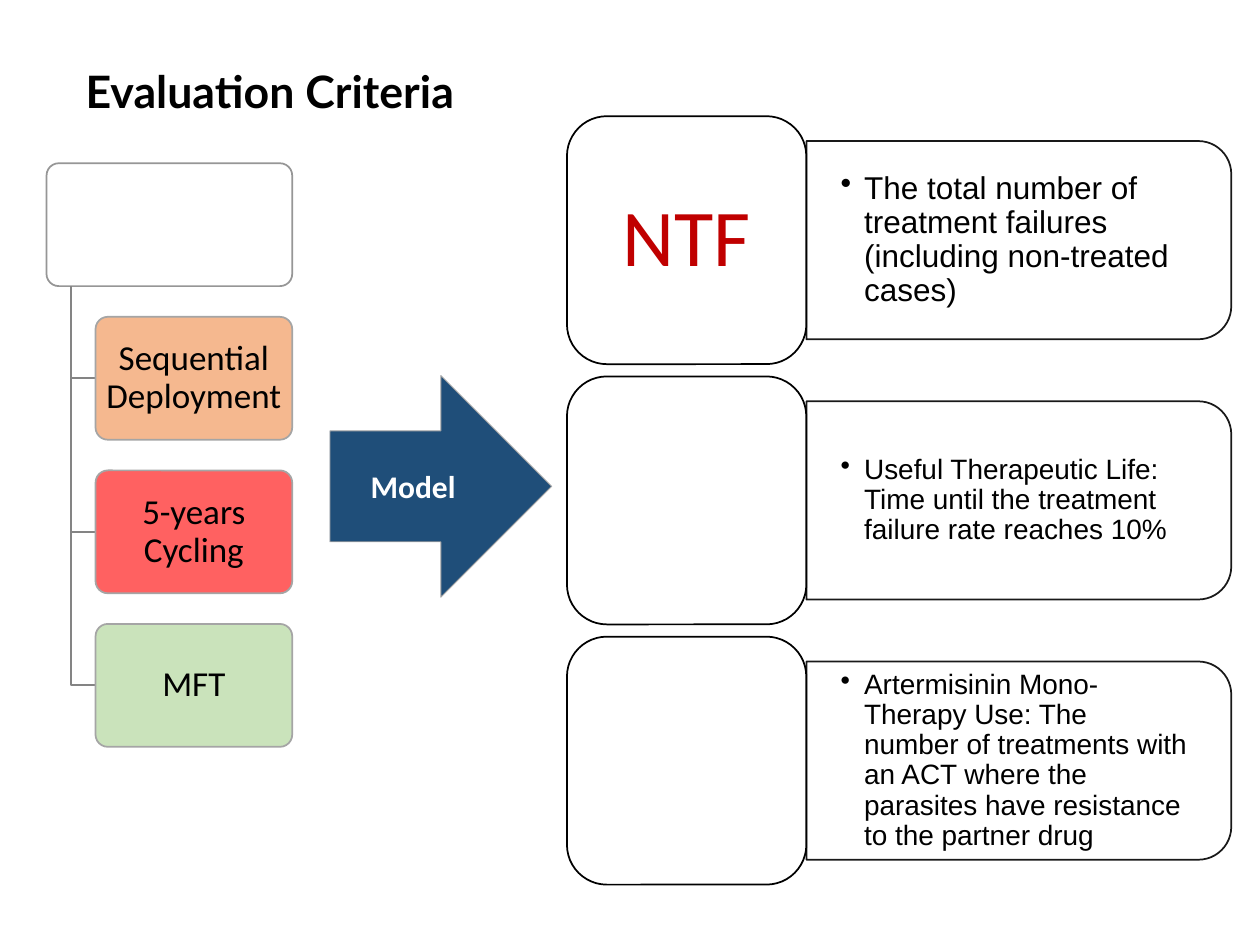
"""Build the Evaluation Criteria slide: strategies, model arrow and outcome measures."""
from lxml import etree
from pptx import Presentation, util as u
from pptx.dml import color
from pptx.enum import shapes, text
from pptx.oxml import ns

COLOURS = {
    "white": "FFFFFF", "black": "000000", "red": "C00000", "navy": "1F4E79",
    "orange": "F4B183", "coral": "FF5050", "green": "C5E0B4",
    "border": "A5A5A5", "root": "969696", "branch": "848484",
}
TITLE = "Evaluation Criteria"
STRATEGIES = [
    ("Sequential Deployment", "orange"),
    ("5-years Cycling", "coral"),
    ("MFT", "green"),
]
CRITERIA = [
    ("NTF", "The total number of treatment failures (including non-treated cases)", 18),
    ("", "Useful Therapeutic Life: Time until the treatment failure rate reaches 10%", 16),
    ("", "Artermisinin Mono-Therapy Use: The number of treatments with an ACT where "
         "the parasites have resistance to the partner drug", 16),
]

ROOT_LEFT, ROOT_TOP, ROOT_WIDTH, NODE_HEIGHT, NODE_PITCH = 26.6, 93.3, 140.4, 70.2, 87.75
CHILD_INDENT = 28
BOX_LEFT, BOX_TOP, BOX_WIDTH, BOX_HEIGHT, BOX_PITCH = 324, 66.4, 136.8, 141.7, 148.7
PANEL_WIDTH, PANEL_HEIGHT, TEXT_WIDTH, TEXT_HEIGHT = 242.8, 113.3, 237, 102.2


def rgb(name):
    return color.RGBColor.from_string(COLOURS[name])


def set_alpha(fill_format, percent):
    element = fill_format._xPr.find(".//" + ns.qn("a:srgbClr"))
    etree.SubElement(element, ns.qn("a:alpha"), val=str(percent * 1000))


def style(shape, fill, line, line_width=1, alpha=None):
    shape.shadow.inherit = False
    if fill:
        shape.fill.solid()
        shape.fill.fore_color.rgb = rgb(fill)
        if alpha:
            set_alpha(shape.fill, alpha)
    else:
        shape.fill.background()
    shape.line.color.rgb = rgb(line)
    shape.line.width = u.Pt(line_width)


def add_box(slide, kind, left, top, width, height, fill, line, **options):
    shape = slide.shapes.add_shape(kind, u.Pt(left), u.Pt(top), u.Pt(width), u.Pt(height))
    style(shape, fill, line, **options)
    return shape


def write(shape, words, size, font="Calibri", colour="black", bold=False,
          align=text.PP_ALIGN.CENTER, insets=(7.2, 3.6), spacing=0.9):
    frame = shape.text_frame
    frame.word_wrap = True
    frame.vertical_anchor = text.MSO_ANCHOR.MIDDLE
    frame.margin_left = frame.margin_right = u.Pt(insets[0])
    frame.margin_top = frame.margin_bottom = u.Pt(insets[1])
    paragraph = frame.paragraphs[0]
    paragraph.alignment = align
    paragraph.line_spacing = spacing
    run = paragraph.add_run()
    run.text = words
    run.font.size = u.Pt(size)
    run.font.name = font
    run.font.bold = bold
    run.font.color.rgb = rgb(colour)
    return paragraph


def add_text(slide, left, top, width, height, words, size, **options):
    box = slide.shapes.add_textbox(u.Pt(left), u.Pt(top), u.Pt(width), u.Pt(height))
    return write(box, words, size, align=text.PP_ALIGN.LEFT, **options)


def add_bullet(paragraph, indent):
    properties = paragraph._p.get_or_add_pPr()
    properties.set("marL", str(u.Pt(indent)))
    properties.set("indent", str(-u.Pt(indent)))
    etree.SubElement(properties, ns.qn("a:buChar"), char="•")


def add_strategies(slide):
    rounded = shapes.MSO_SHAPE.ROUNDED_RECTANGLE
    root = add_box(slide, rounded, ROOT_LEFT, ROOT_TOP, ROOT_WIDTH, NODE_HEIGHT, "white", "root")
    root.adjustments[0] = 0.1
    trunk = ROOT_LEFT + CHILD_INDENT / 2
    child_left = ROOT_LEFT + CHILD_INDENT
    for row, (label, fill) in enumerate(STRATEGIES, start=1):
        top = ROOT_TOP + row * NODE_PITCH
        middle = top + NODE_HEIGHT / 2
        builder = slide.shapes.build_freeform(u.Pt(trunk), u.Pt(ROOT_TOP + NODE_HEIGHT))
        builder.add_line_segments(
            [(u.Pt(trunk), u.Pt(middle)), (u.Pt(child_left), u.Pt(middle))], close=False)
        style(builder.convert_to_shape(), None, "branch")
        node = add_box(slide, rounded, child_left, top, ROOT_WIDTH - CHILD_INDENT, NODE_HEIGHT,
                       fill, "border", alpha=90)
        node.adjustments[0] = 0.1
        write(node, label, 20, insets=(2.5, 2.5))


def add_criteria(slide):
    panel_left = BOX_LEFT + BOX_WIDTH
    for row, (label, description, size) in enumerate(CRITERIA):
        top = BOX_TOP + row * BOX_PITCH
        middle = top + BOX_HEIGHT / 2
        panel = add_box(slide, shapes.MSO_SHAPE.ROUND_2_SAME_RECTANGLE,
                        panel_left + (PANEL_WIDTH - PANEL_HEIGHT) / 2, middle - PANEL_WIDTH / 2,
                        PANEL_HEIGHT, PANEL_WIDTH, "white", "black", alpha=90)
        panel.rotation = 90
        set_alpha(panel.line.fill, 90)
        paragraph = add_text(slide, panel_left, middle - TEXT_HEIGHT / 2, TEXT_WIDTH, TEXT_HEIGHT,
                             description, size, font="Arial", insets=(19.5, 10))
        add_bullet(paragraph, 13.5)
        box = add_box(slide, shapes.MSO_SHAPE.ROUNDED_RECTANGLE, BOX_LEFT, top,
                      BOX_WIDTH, BOX_HEIGHT, "white", "black")
        if label:
            write(box, label, 46, colour="red")


def main():
    presentation = Presentation()
    presentation.slide_width, presentation.slide_height = u.Pt(720), u.Pt(540)
    slide = presentation.slides.add_slide(presentation.slide_layouts[6])
    add_strategies(slide)
    arrow = add_box(slide, shapes.MSO_SHAPE.RIGHT_ARROW, 188.6, 214.6, 126.7, 126.7,
                    "navy", "border", line_width=0.5)
    write(arrow, "Model", 18, colour="white", bold=True, spacing=1.0)
    add_criteria(slide)
    add_text(slide, 41.8, 23, 491, 62, TITLE, 25.5, font="Lato", bold=True)
    presentation.save("out.pptx")


if __name__ == "__main__":
    main()
